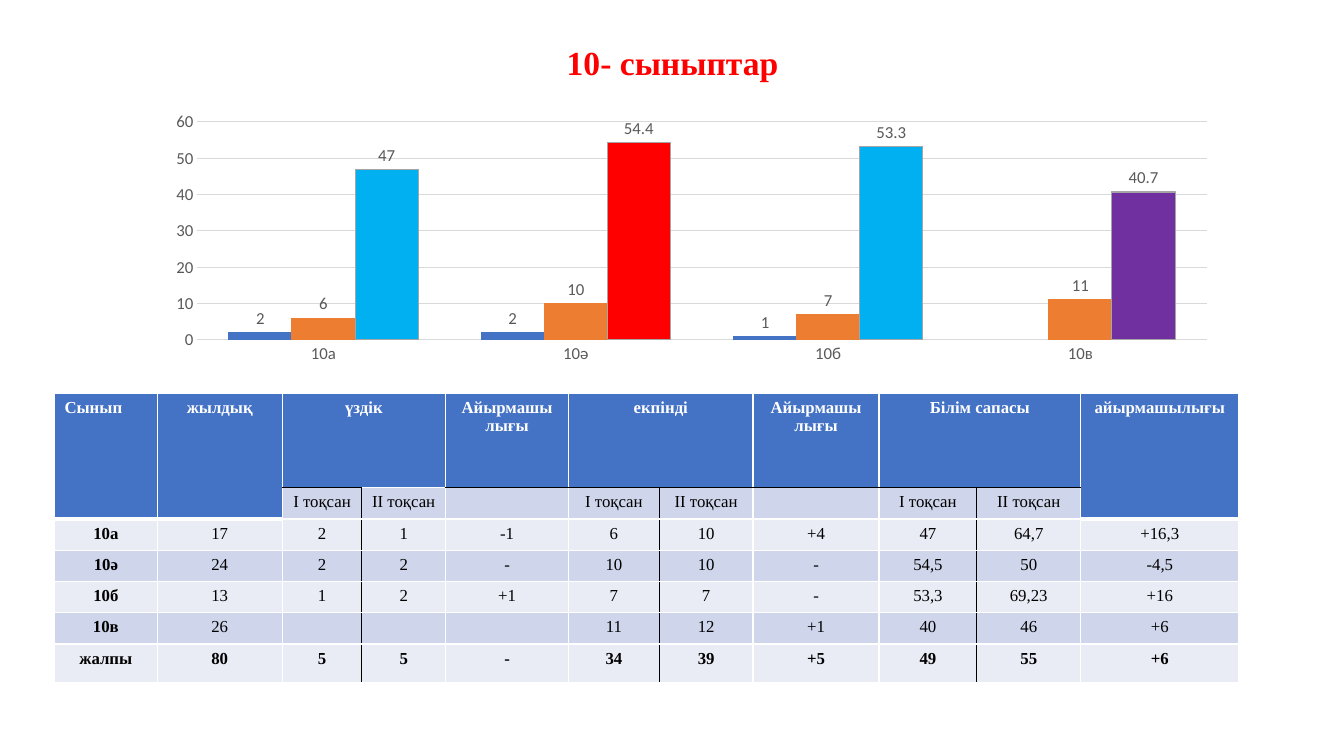
from dataclasses import dataclass

from lxml import etree
from pptx import Presentation
from pptx.chart.data import CategoryChartData
from pptx.dml.color import RGBColor
from pptx.enum.chart import XL_CHART_TYPE, XL_LABEL_POSITION, XL_TICK_MARK
from pptx.enum.text import MSO_ANCHOR, PP_ALIGN
from pptx.oxml.ns import qn
from pptx.slide import Slide
from pptx.table import _Cell
from pptx.util import Inches, Pt

CLUSTERED = XL_CHART_TYPE.COLUMN_CLUSTERED
OUTSIDE_END = XL_LABEL_POSITION.OUTSIDE_END
NO_TICK = XL_TICK_MARK.NONE
MIDDLE = MSO_ANCHOR.MIDDLE
LEFT, CENTER = PP_ALIGN.LEFT, PP_ALIGN.CENTER

WHITE = RGBColor(0xFF, 0xFF, 0xFF)
BLACK = RGBColor(0x00, 0x00, 0x00)
RED = RGBColor(0xFF, 0x00, 0x00)
BLUE = RGBColor(0x44, 0x72, 0xC4)
ORANGE = RGBColor(0xED, 0x7D, 0x31)
SKY = RGBColor(0x00, 0xB0, 0xF0)
PURPLE = RGBColor(0x70, 0x30, 0xA0)
GREY = RGBColor(0xA5, 0xA5, 0xA5)
GRID_GREY = RGBColor(0xD9, 0xD9, 0xD9)
TEXT_GREY = RGBColor(0x59, 0x59, 0x59)
BAND_DARK = RGBColor(0xCF, 0xD5, 0xEA)
BAND_LIGHT = RGBColor(0xE9, 0xEB, 0xF5)

SERIF, SANS = "Times New Roman", "Calibri"


@dataclass
class Series:
    name: str
    values: tuple[float | None, ...]
    colors: tuple[RGBColor, ...]
    outline: RGBColor


CLASSES = ("10а", "10ә", "10б", "10в")
SERIES = (
    Series("Series 1", (2, 2, 1, None), (BLUE,), BLUE),
    Series("Series 2", (6, 10, 7, 11), (ORANGE,), ORANGE),
    Series("Series 3", (47, 54.4, 53.3, 40.7), (SKY, RED, SKY, PURPLE), GREY),
)
PLOT_AREA = {"x": 0.084, "y": 0.121, "w": 0.86, "h": 0.793}

COLUMN_WIDTHS = (1.02, 1.24, 0.79, 0.83, 1.22, 0.9, 0.93, 1.25, 0.97, 1.03, 1.57)
ROW_HEIGHTS = (0.94, 0.31, 0.31, 0.31, 0.31, 0.31, 0.38)
TERM_STARTS = (2, 5, 8)  # first column of each pair of terms
TALL_HEADERS = (0, 1, 10)  # columns whose header covers two rows
TERMS = ("І тоқсан", "ІІ тоқсан")
ROWS = (
    ("Сынып", "жылдық", "үздік", "", "Айырмашы\nлығы", "екпінді", "",
     "Айырмашы\nлығы", "Білім сапасы", "", "айырмашылығы"),
    ("", "", *TERMS, "", *TERMS, "", *TERMS, ""),
    ("10а", "17", "2", "1", "-1", "6", "10", "+4", "47", "64,7", "+16,3"),
    ("10ә", "24", "2", "2", "-", "10", "10", "-", "54,5", "50", "-4,5"),
    ("10б", "13", "1", "2", "+1", "7", "7", "-", "53,3", "69,23", "+16"),
    ("10в", "26", "", "", "", "11", "12", "+1", "40", "46", "+6"),
    ("жалпы", "80", "5", "5", "-", "34", "39", "+5", "49", "55", "+6"),
)


def style_font(font, name: str, size: float, color: RGBColor, bold: bool = False) -> None:
    font.name, font.size, font.bold = name, Pt(size), bold
    font.color.rgb = color


def style_line(line, color: RGBColor) -> None:
    line.color.rgb = color
    line.width = Pt(0.75)


def add_title(page: Slide) -> None:
    title = page.shapes.title
    title.left, title.top = Inches(0.92), Inches(0.4)
    title.width, title.height = Inches(11.5), Inches(0.48)
    title.text_frame.text = "10- сыныптар"
    title.text_frame.vertical_anchor = MIDDLE
    para = title.text_frame.paragraphs[0]
    para.alignment, para.line_spacing = CENTER, 0.9
    style_font(para.runs[0].font, SERIF, 24, RED, True)


def place_plot(chart) -> None:
    """Fix the inner plot area to fractions of the chart."""
    plot_area = chart.plots[0]._element.getparent()
    for old in plot_area.findall(qn("c:layout")):
        plot_area.remove(old)
    layout = etree.Element(qn("c:layout"))
    manual = etree.SubElement(layout, qn("c:manualLayout"))
    settings = {"layoutTarget": "inner", "xMode": "edge", "yMode": "edge", **PLOT_AREA}
    for tag, value in settings.items():
        etree.SubElement(manual, qn(f"c:{tag}")).set("val", str(value))
    plot_area.insert(0, layout)


def add_class_chart(page: Slide) -> None:
    data = CategoryChartData()
    data.categories = CLASSES
    for item in SERIES:
        data.add_series(item.name, item.values)
    frame = page.shapes.add_chart(
        CLUSTERED, Inches(0.98), Inches(0.88), Inches(11.64), Inches(2.73), data)
    chart = frame.chart
    chart.has_legend = chart.has_title = False
    style_font(chart.font, SANS, 10, BLACK)
    plot = chart.plots[0]
    plot.gap_width, plot.overlap, plot.vary_by_categories = 100, 0, False

    # Axes
    for axis in (chart.category_axis, chart.value_axis):
        axis.major_tick_mark = axis.minor_tick_mark = NO_TICK
        style_font(axis.tick_labels.font, SANS, 12, TEXT_GREY)
    style_line(chart.category_axis.format.line, GRID_GREY)
    values = chart.value_axis
    values.format.line.fill.background()
    values.minimum_scale, values.maximum_scale, values.major_unit = 0, 60, 10
    style_line(values.major_gridlines.format.line, GRID_GREY)

    # Bars and their labels
    for item, bars in zip(SERIES, plot.series):
        bars.invert_if_negative = False
        targets = [bars]
        if len(item.colors) > 1:
            targets += [bars.points[index] for index in range(len(item.colors))]
        for target, color in zip(targets, (item.colors[0], *item.colors)):
            target.format.fill.solid()
            target.format.fill.fore_color.rgb = color
            style_line(target.format.line, item.outline)
        labels = bars.data_labels
        labels.show_value, labels.position = True, OUTSIDE_END
        style_font(labels.font, SANS, 12, TEXT_GREY)
    place_plot(chart)


def set_borders(cell: _Cell, row: int, column: int) -> None:
    """Draw white edges, with black ones between terms and under the header."""
    tall = column in TALL_HEADERS
    first_term = column in TERM_STARTS
    second_term = column - 1 in TERM_STARTS
    black = {
        "L": row > 0 and second_term,
        "R": row > 0 and first_term,
        "T": row == 1 and not tall and column != 3,
        "B": row == 0 and not tall and column != 3,
    }
    properties = cell._tc.get_or_add_tcPr()
    for side, is_black in black.items():
        width = Pt(3) if side == "B" and tall and row < 2 else Pt(1)
        line = etree.SubElement(properties, qn(f"a:ln{side}"), w=str(int(width)))
        fill = etree.SubElement(line, qn("a:solidFill"))
        etree.SubElement(fill, qn("a:srgbClr"), val=str(BLACK if is_black else WHITE))


def fill_cell(cell: _Cell, row: int, column: int, text: str) -> None:
    header = row == 0 or (row == 1 and column in TALL_HEADERS)
    set_borders(cell, row, column)
    cell.fill.solid()
    cell.fill.fore_color.rgb = BLUE if header else (BAND_LIGHT, BAND_DARK)[row % 2]
    cell.text_frame.text = text
    bold = header or row == len(ROWS) - 1 or (column == 0 and row > 1)
    for para in cell.text_frame.paragraphs:
        para.alignment = LEFT if row == column == 0 else CENTER
        for span in para.runs:
            style_font(span.font, SERIF, 12, WHITE if header else BLACK, bold)
        if not para.runs:  # keeps empty rows low
            etree.SubElement(para._p, qn("a:endParaRPr"), sz="1200")


def add_results_table(page: Slide) -> None:
    frame = page.shapes.add_table(
        len(ROWS), len(COLUMN_WIDTHS), Inches(0.54), Inches(3.9),
        Inches(sum(COLUMN_WIDTHS)), Inches(sum(ROW_HEIGHTS)))
    table = frame.table
    for column, width in zip(table.columns, COLUMN_WIDTHS):
        column.width = Inches(width)
    for row, height in zip(table.rows, ROW_HEIGHTS):
        row.height = Inches(height)
    for row, texts in enumerate(ROWS):
        for column, text in enumerate(texts):
            fill_cell(table.cell(row, column), row, column, text)
    for column in TALL_HEADERS:
        table.cell(0, column).merge(table.cell(1, column))
    for column in TERM_STARTS:
        table.cell(0, column).merge(table.cell(0, column + 1))


def main() -> None:
    deck = Presentation()
    deck.slide_width, deck.slide_height = Inches(13.33), Inches(7.5)
    page = deck.slides.add_slide(deck.slide_layouts.get_by_name("Title Only"))
    add_title(page)
    add_class_chart(page)
    add_results_table(page)
    deck.save("out.pptx")


if __name__ == "__main__":
    main()
